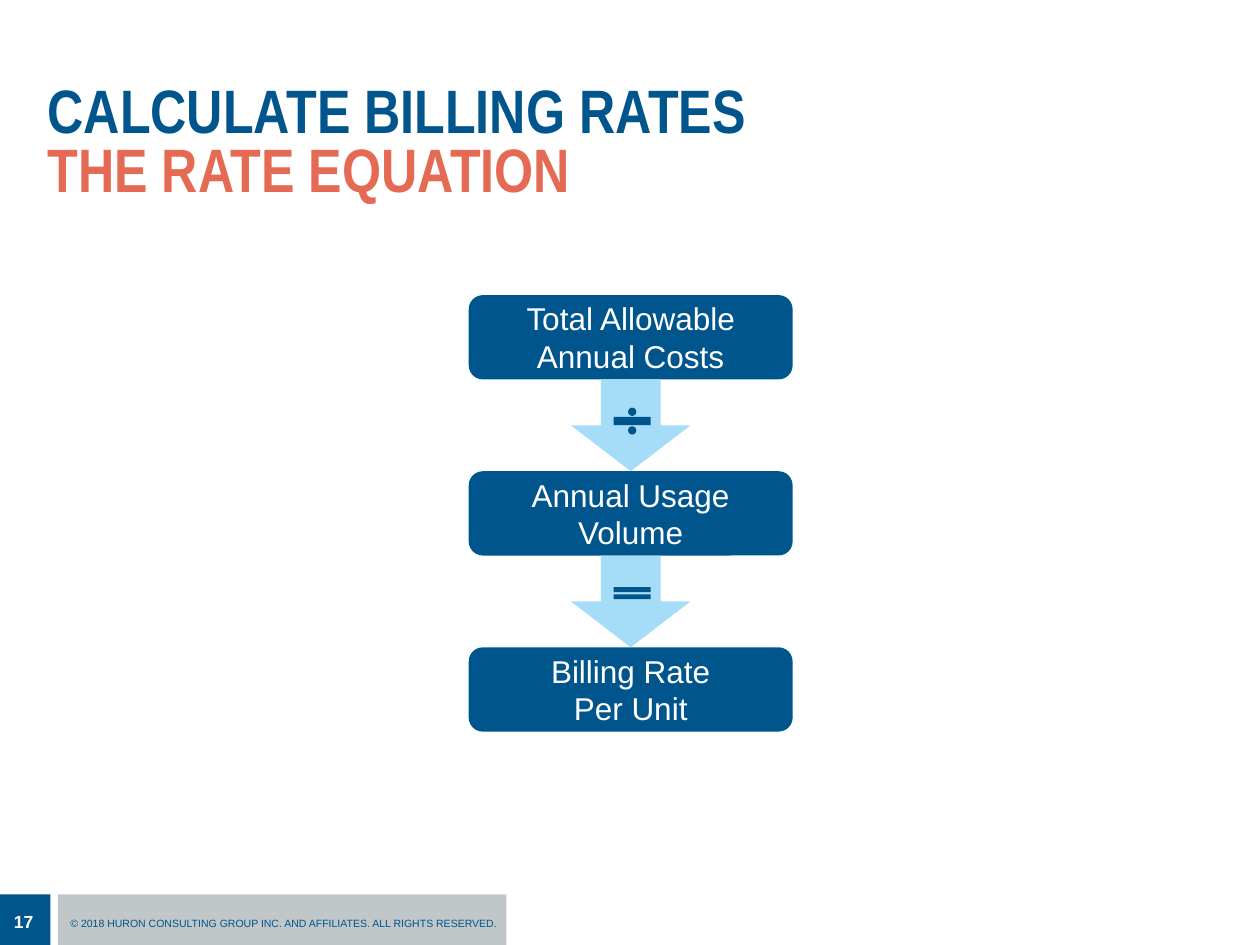
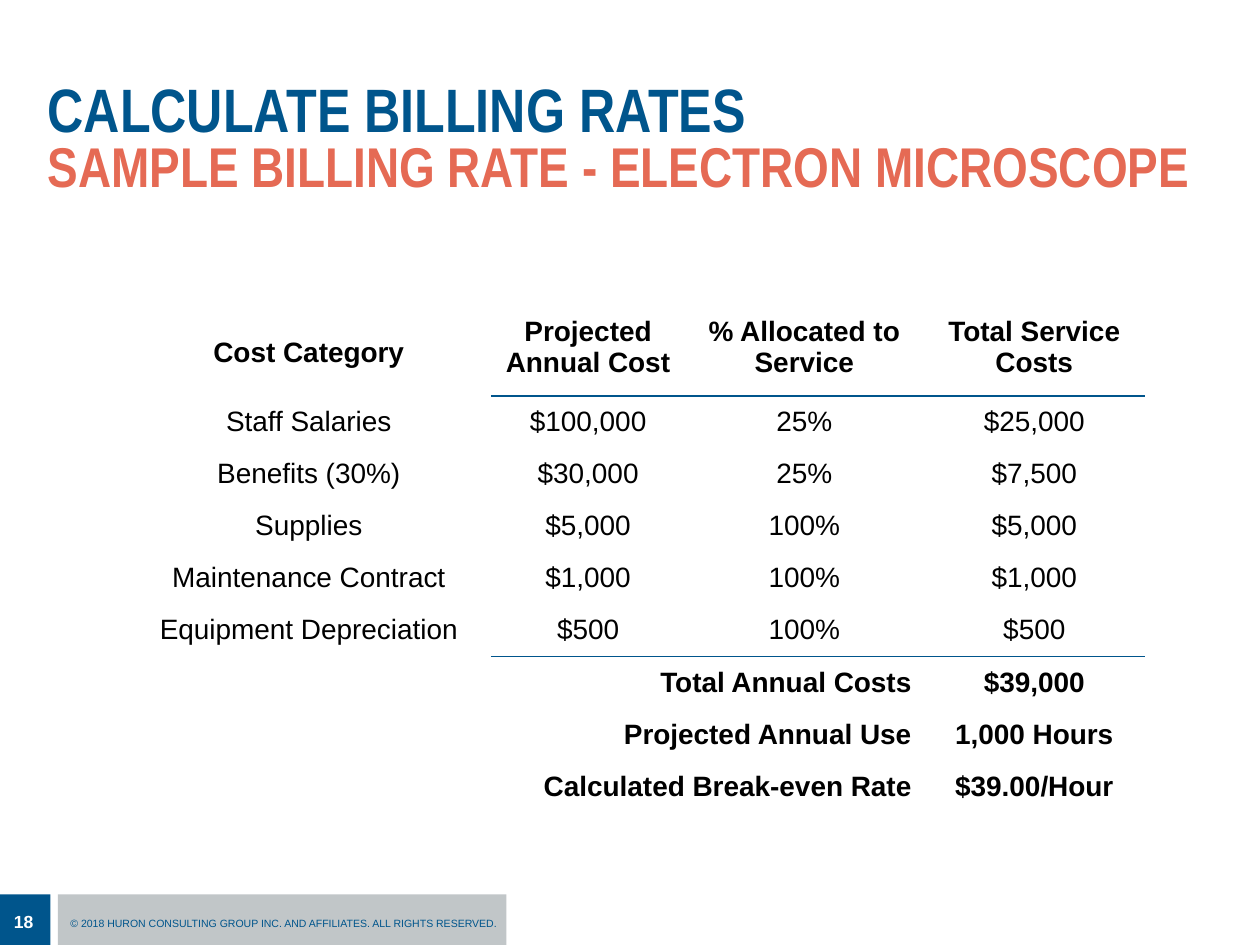
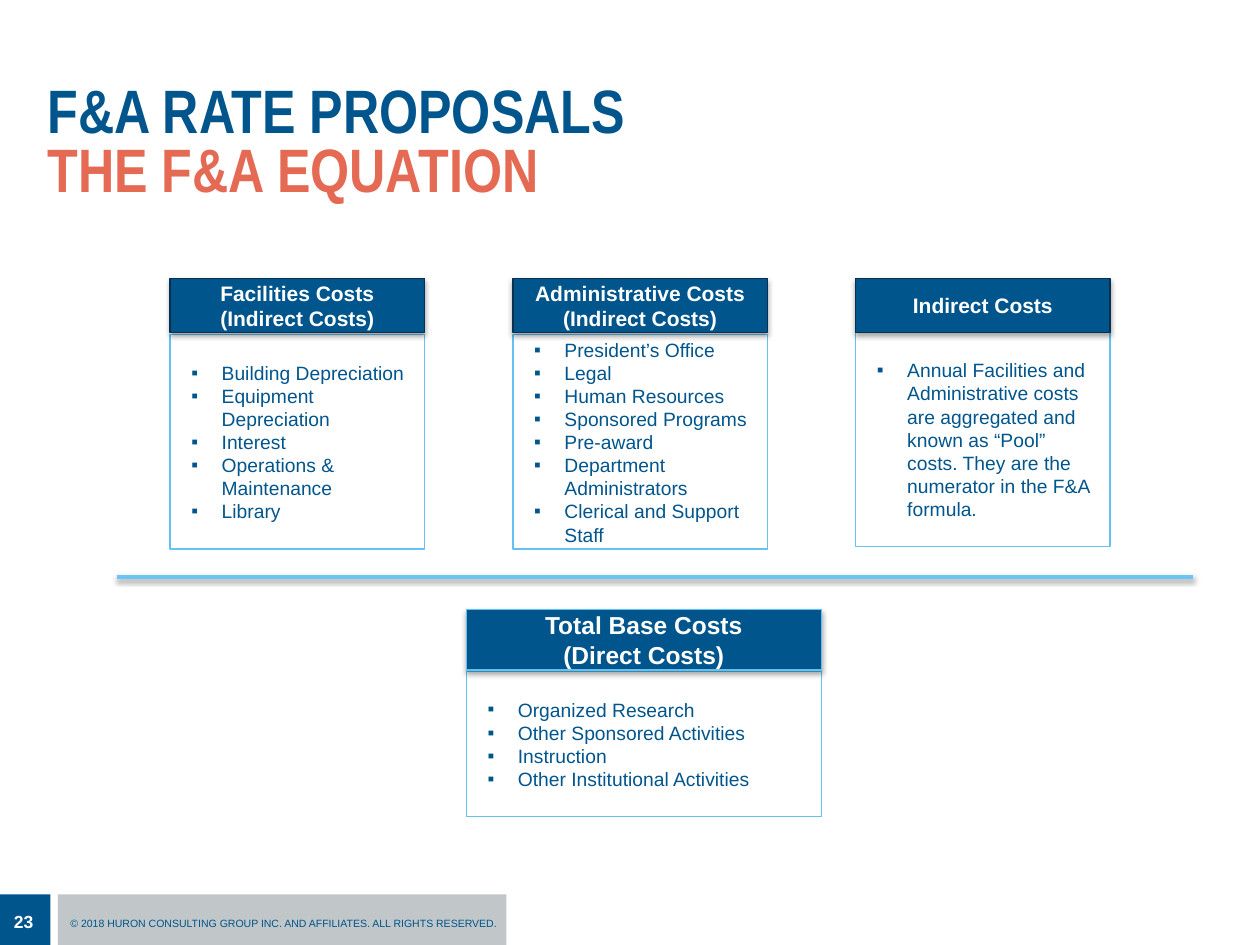
from dataclasses import dataclass

from lxml import etree
from pptx import Presentation
from pptx.dml.color import RGBColor
from pptx.enum.shapes import MSO_CONNECTOR, MSO_SHAPE
from pptx.enum.text import MSO_ANCHOR, PP_ALIGN
from pptx.oxml.ns import qn
from pptx.util import Cm, Pt

RECTANGLE = MSO_SHAPE.RECTANGLE
PROCESS = MSO_SHAPE.FLOWCHART_ALTERNATE_PROCESS
DOWN_ARROW = MSO_SHAPE.DOWN_ARROW
DIVIDE = MSO_SHAPE.MATH_DIVIDE
EQUAL = MSO_SHAPE.MATH_EQUAL
STRAIGHT = MSO_CONNECTOR.STRAIGHT
TOP, MIDDLE = MSO_ANCHOR.TOP, MSO_ANCHOR.MIDDLE
LEFT, CENTER, RIGHT = PP_ALIGN.LEFT, PP_ALIGN.CENTER, PP_ALIGN.RIGHT


@dataclass(frozen=True)
class Theme:
    blue: str = "00558C"
    coral: str = "E56A54"
    grey: str = "C1C6C8"
    white: str = "FFFFFF"
    black: str = "000000"
    arrow: str = "A5DCF8"
    header_edge: str = "09304F"
    card_edge: str = "63C2F2"
    fraction_bar: str = "69C5F4"
    font: str = "Arial"
    title_font: str = "Arial Narrow"
    title_size: float = 35
    long_title_size: float = 32
    step_size: float = 18
    table_size: float = 16
    base_size: float = 14
    header_size: float = 12
    bullet_size: float = 11
    page_size: float = 10
    footer_size: float = 6


THEME = Theme()

COPYRIGHT = "© 2018 HURON CONSULTING GROUP INC. AND AFFILIATES. ALL RIGHTS RESERVED."

STEPS = ["Total Allowable Annual Costs", "Annual Usage Volume", "Billing Rate\nPer Unit"]
OPERATORS = [(DIVIDE, 0.71, 0.84), (EQUAL, 0.41, 0.76)]

COST_COLUMNS = [7.37, 3.89, 4.83, 4.44]
COST_HEADER = ["Cost Category", "Projected Annual Cost", "% Allocated to Service", "Total Service Costs"]
COSTS = [
    ["Staff Salaries", "$100,000", "25%", "$25,000"],
    ["Benefits (30%)", "$30,000", "25%", "$7,500"],
    ["Supplies", "$5,000", "100%", "$5,000"],
    ["Maintenance Contract", "$1,000", "100%", "$1,000"],
    ["Equipment Depreciation", "$500", "100%", "$500"],
]
TOTALS = [
    ["Total Annual Costs", "$39,000"],
    ["Projected Annual Use", "1,000 Hours"],
    ["Calculated Break-even Rate", "$39.00/Hour"],
]

NUMERATOR = [
    ("Facilities Costs\n(Indirect Costs)", 0.05, [
        "Building Depreciation", "Equipment Depreciation", "Interest",
        "Operations & Maintenance", "Library"]),
    ("Administrative Costs\n(Indirect Costs)", 0.05, [
        "President’s Office", "Legal", "Human Resources", "Sponsored Programs",
        "Pre-award", "Department Administrators", "Clerical and Support Staff"]),
    ("Indirect Costs", 0, [
        "Annual Facilities and Administrative costs are aggregated and known as "
        "“Pool” costs. They are the numerator in the F&A formula."]),
]
DENOMINATOR = ("Total Base Costs\n(Direct Costs)", 0.03, [
    "Organized Research", "Other Sponsored Activities", "Instruction",
    "Other Institutional Activities"])


def style_font(font, size, color, bold=False, name=THEME.font):
    font.name = name
    font.size = Pt(size)
    font.bold = bold
    font.color.rgb = RGBColor.from_string(color)


def write(text_frame, text, size, color, bold=False, align=LEFT, bulleted=False):
    text_frame.text = text
    for paragraph in text_frame.paragraphs:
        paragraph.alignment = align
        if bulleted:
            add_bullet(paragraph)
        style_font(paragraph.font, size, color, bold)
        for run in paragraph.runs:
            style_font(run.font, size, color, bold)


def add_bullet(paragraph):
    properties = paragraph._p.get_or_add_pPr()
    properties.set("marL", str(Cm(0.79)))
    properties.set("indent", str(Cm(-0.61)))
    etree.SubElement(properties, qn("a:buFont")).set("typeface", THEME.font)
    etree.SubElement(properties, qn("a:buChar")).set("char", "▪")


def add_block(slide, kind, left, top, width, height, fill=None, line=None):
    shape = slide.shapes.add_shape(kind, Cm(left), Cm(top), Cm(width), Cm(height))
    if fill:
        shape.fill.solid()
        shape.fill.fore_color.rgb = RGBColor.from_string(fill)
    else:
        shape.fill.background()
    if line:
        shape.line.color.rgb = RGBColor.from_string(line)
        shape.line.width = Pt(0.75)
    else:
        shape.line.fill.background()
    shape.shadow.inherit = False
    shape.text_frame.word_wrap = True
    shape.text_frame.vertical_anchor = MIDDLE
    return shape


def add_shadow(shape, distance, opacity):
    properties = shape._element.spPr
    effects = properties.find(qn("a:effectLst"))
    if effects is None:
        effects = etree.SubElement(properties, qn("a:effectLst"))
    shadow = etree.SubElement(effects, qn("a:outerShdw"))
    for key, value in (("blurRad", Pt(3.1)), ("dist", Pt(distance)), ("dir", 5400000), ("rotWithShape", 0)):
        shadow.set(key, str(value))
    color = etree.SubElement(shadow, qn("a:srgbClr"))
    color.set("val", THEME.black)
    etree.SubElement(color, qn("a:alpha")).set("val", str(opacity * 1000))


def add_text_box(slide, left, top, width, height):
    text_frame = slide.shapes.add_textbox(Cm(left), Cm(top), Cm(width), Cm(height)).text_frame
    text_frame.word_wrap = True
    return text_frame


def add_base_slide(presentation, page, title, subtitle, top=1.3, subtitle_size=THEME.title_size):
    slide = presentation.slides.add_slide(presentation.slide_layouts[6])

    add_block(slide, RECTANGLE, 1.17, 18.03, 9.04, 1.02, THEME.grey)
    footer = add_text_box(slide, 1.17, 18.36, 9.32, 0.5)
    footer.word_wrap = False
    write(footer, COPYRIGHT, THEME.footer_size, THEME.blue)

    add_block(slide, RECTANGLE, 0, 18.03, 1.02, 1.02, THEME.blue)
    number = add_text_box(slide, 0.03, 18.24, 1.02, 0.69)
    number.vertical_anchor = MIDDLE
    number.margin_left = Cm(0.25)
    write(number, str(page), THEME.page_size, THEME.white, True)

    heading = add_text_box(slide, 0.71, top, 24.03, 3.25)
    heading.vertical_anchor = MIDDLE
    heading.margin_top = heading.margin_bottom = Cm(0.25)
    heading.text = f"{title}\v{subtitle}"
    paragraph = heading.paragraphs[0]
    paragraph.line_spacing = 0.8
    styles = [(THEME.title_size, THEME.blue), (subtitle_size, THEME.coral)]
    for run, (size, color) in zip(paragraph.runs, styles):
        style_font(run.font, size, color, True, THEME.title_font)
    return slide


def build_rate_equation(presentation):
    slide = add_base_slide(presentation, 17, "CALCULATE BILLING RATES", "THE RATE EQUATION")
    left, top, width, height, pitch = 9.45, 5.95, 6.53, 1.7, 3.55
    center = left + width / 2
    arrow_width, operator_width = 2.41, 1.02
    for index, step in enumerate(STEPS):
        box = add_block(slide, PROCESS, left, top + index * pitch, width, height, THEME.blue)
        write(box.text_frame, step, THEME.step_size, THEME.white, align=CENTER)
    for index, (kind, operator_height, offset) in enumerate(OPERATORS):
        arrow_top = top + index * pitch + height
        add_block(slide, DOWN_ARROW, center - arrow_width / 2, arrow_top,
                  arrow_width, pitch - height, THEME.arrow)
        add_block(slide, kind, center - operator_width / 2 + 0.03,
                  arrow_top + offset - operator_height / 2,
                  operator_width, operator_height, THEME.blue)


def add_rule(cell, side):
    line = etree.Element(qn(f"a:{side}"))
    line.set("w", str(Pt(1)))
    fill = etree.SubElement(line, qn("a:solidFill"))
    etree.SubElement(fill, qn("a:srgbClr")).set("val", THEME.blue)
    cell._tc.get_or_add_tcPr().insert(0, line)


def build_sample_rate(presentation):
    slide = add_base_slide(presentation, 18, "CALCULATE BILLING RATES",
                           "SAMPLE BILLING RATE - ELECTRON MICROSCOPE", 1.24, THEME.long_title_size)
    rows = [COST_HEADER] + COSTS + [["", label, "", value] for label, value in TOTALS]
    first_total = 1 + len(COSTS)
    heights = [1.73] + [1.05] * (len(rows) - 1)
    table = slide.shapes.add_table(len(rows), len(COST_COLUMNS), Cm(2.54), Cm(6.25),
                                   Cm(sum(COST_COLUMNS)), Cm(sum(heights))).table
    table.first_row = table.horz_banding = False
    for column, width in zip(table.columns, COST_COLUMNS):
        column.width = Cm(width)
    for row, height in zip(table.rows, heights):
        row.height = Cm(height)
    for row_index, row in enumerate(rows):
        is_header, is_total = row_index == 0, row_index >= first_total
        for column_index, text in enumerate(row):
            cell = table.cell(row_index, column_index)
            cell.fill.background()
            cell.vertical_anchor = TOP if is_header and column_index else MIDDLE
            align = RIGHT if is_total and column_index == 1 else CENTER
            write(cell.text_frame, text, THEME.table_size, THEME.black, is_header or is_total, align)
            if column_index and row_index in (0, first_total - 1):
                add_rule(cell, "lnB")
            if column_index and row_index in (1, first_total):
                add_rule(cell, "lnT")
        if is_total:
            table.cell(row_index, 1).merge(table.cell(row_index, 2))


def add_card(slide, card, left, top, width, header_height, body_height, size, edge):
    title, gap, items = card
    body = add_block(slide, RECTANGLE, left, top + header_height + gap, width, body_height,
                     line=THEME.card_edge)
    write(body.text_frame, "\n".join(items), THEME.bullet_size, THEME.blue, bulleted=True)
    header = add_block(slide, RECTANGLE, left, top, width, header_height, THEME.blue, edge)
    add_shadow(header, 1.8, 35)
    write(header.text_frame, title, size, THEME.white, True, CENTER)


def build_fa_equation(presentation):
    slide = add_base_slide(presentation, 23, "F&A RATE PROPOSALS", "THE F&A EQUATION")
    for index, card in enumerate(NUMERATOR):
        add_card(slide, card, 3.43 + index * 6.91, 5.61, 5.13, 1.09, 4.32,
                 THEME.header_size, THEME.header_edge)
    bar = slide.shapes.add_connector(STRAIGHT, Cm(2.36), Cm(11.63), Cm(24.05), Cm(11.63))
    bar.line.color.rgb = RGBColor.from_string(THEME.fraction_bar)
    bar.line.width = Pt(2)
    add_shadow(bar, 1.6, 38)
    add_card(slide, DENOMINATOR, 9.4, 12.29, 7.16, 1.22, 2.92, THEME.base_size, THEME.card_edge)


def main():
    presentation = Presentation()
    presentation.slide_width = Cm(25.4)
    presentation.slide_height = Cm(19.05)
    build_rate_equation(presentation)
    build_sample_rate(presentation)
    build_fa_equation(presentation)
    presentation.save("out.pptx")


if __name__ == "__main__":
    main()
